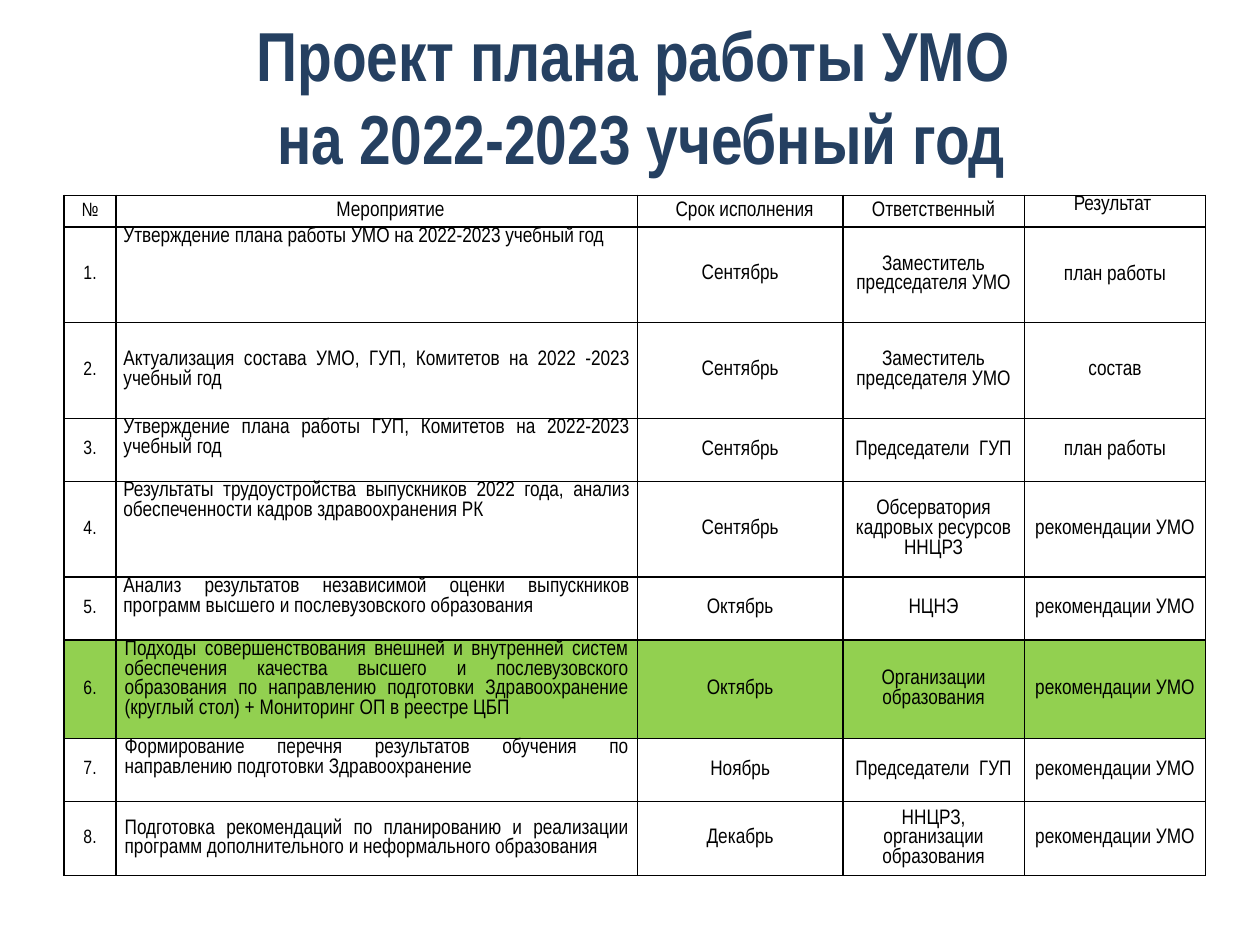
from dataclasses import dataclass

from lxml.etree import SubElement
from pptx import Presentation
from pptx.dml.color import RGBColor
from pptx.enum.text import MSO_ANCHOR, MSO_AUTO_SIZE, PP_ALIGN
from pptx.oxml.ns import qn
from pptx.util import Inches, Pt


@dataclass(frozen=True)
class Theme:
    font: str = "Arial Narrow"
    heading: str = "254061"
    ink: str = "000000"
    plain: str = "FFFFFF"
    highlight: str = "92D050"
    heading_size: float = 39.6
    body_size: float = 12
    number_size: float = 11


theme = Theme()


def style(paragraph, size, color, align):
    paragraph.alignment = align
    paragraph.font.name = theme.font
    paragraph.font.size = Pt(size)
    paragraph.font.color.rgb = RGBColor.from_string(color)


def outline(cell):
    properties = cell._tc.get_or_add_tcPr()
    for position, side in enumerate(("lnL", "lnR", "lnT", "lnB")):
        border = properties.makeelement(qn(f"a:{side}"), {"w": str(Pt(1))})
        solid = SubElement(border, qn("a:solidFill"))
        SubElement(solid, qn("a:srgbClr"), val=theme.ink)
        properties.insert(position, border)


headers = ["№", "Мероприятие", "Срок исполнения", "Ответственный", "Результат "]
activities = [
    ("Утверждение плана работы УМО на 2022-2023 учебный год",
     "Сентябрь", "Заместитель председателя УМО", "план работы"),
    ("Актуализация состава УМО, ГУП, Комитетов на 2022 -2023 учебный год",
     "Сентябрь", "Заместитель председателя УМО", "состав"),
    ("Утверждение плана работы ГУП, Комитетов на 2022-2023 учебный год",
     "Сентябрь", "Председатели  ГУП", "план работы"),
    ("Результаты трудоустройства выпускников 2022 года, анализ обеспеченности "
     "кадров здравоохранения РК",
     "Сентябрь", "Обсерватория кадровых ресурсов ННЦРЗ", "рекомендации УМО"),
    ("Анализ результатов независимой оценки выпускников программ высшего и "
     "послевузовского образования",
     "Октябрь", "НЦНЭ", "рекомендации УМО"),
    ("Подходы совершенствования внешней и внутренней систем обеспечения качества "
     "высшего и послевузовского образования по направлению подготовки "
     "Здравоохранение (круглый стол) + Мониторинг ОП в реестре ЦБП",
     "Октябрь", "Организации образования", "рекомендации УМО"),
    ("Формирование перечня результатов обучения по направлению подготовки "
     "Здравоохранение",
     "Ноябрь", "Председатели  ГУП", "рекомендации УМО"),
    ("Подготовка рекомендаций по планированию и реализации программ "
     "дополнительного и неформального образования",
     "Декабрь", "ННЦРЗ, организации образования", "рекомендации УМО"),
]
plan_rows = [headers] + [(f"{n}.", *activity) for n, activity in enumerate(activities, 1)]
column_widths = [0.41, 4.14, 1.63, 1.44, 1.44]
row_heights = [0.25, 0.76, 0.76, 0.5, 0.76, 0.5, 0.78, 0.5, 0.59]
number_column, activity_column, term_column, result_column = 0, 1, 2, 4
centred_activities = (0, 2, 8)
highlighted_row = 6
first_line_indents = {activity_column: 0.22, term_column: 0.07}

presentation = Presentation()
presentation.slide_width, presentation.slide_height = Inches(10), Inches(7.5)
slide = presentation.slides.add_slide(presentation.slide_layouts[5])

heading = slide.shapes.title
heading.left, heading.top = Inches(0.59), Inches(0.13)
heading.width, heading.height = Inches(9), Inches(1.25)
heading.text_frame.text = "Проект плана работы УМО \vна 2022-2023 учебный год"
heading.text_frame.auto_size = MSO_AUTO_SIZE.NONE
heading.text_frame.vertical_anchor = MSO_ANCHOR.MIDDLE
heading_line = heading.text_frame.paragraphs[0]
style(heading_line, theme.heading_size, theme.heading, PP_ALIGN.CENTER)
heading_line.font.bold = True

plan = slide.shapes.add_table(
    len(plan_rows), len(column_widths), Inches(0.51), Inches(1.55),
    Inches(sum(column_widths)), Inches(sum(row_heights)),
).table
for column, width in zip(plan.columns, column_widths):
    column.width = Inches(width)

for r, (values, height) in enumerate(zip(plan_rows, row_heights)):
    plan.rows[r].height = Inches(height)
    for c, value in enumerate(values):
        cell = plan.cell(r, c)
        cell.text = value
        cell.margin_left = cell.margin_right = Inches(0.07 if r >= 6 and c else 0.06)
        cell.margin_top = cell.margin_bottom = 0
        at_top = (c == activity_column and r not in centred_activities
                  or c == result_column and r == 0)
        cell.vertical_anchor = MSO_ANCHOR.TOP if at_top else MSO_ANCHOR.MIDDLE
        cell.fill.solid()
        cell.fill.fore_color.rgb = RGBColor.from_string(
            theme.highlight if r == highlighted_row else theme.plain)
        outline(cell)

        entry = cell.text_frame.paragraphs[0]
        style(entry,
              theme.number_size if c == number_column else theme.body_size,
              theme.ink,
              PP_ALIGN.JUSTIFY if r and c == activity_column else PP_ALIGN.CENTER)
        entry.font.bold = False
        if r and c == term_column:
            entry.line_spacing = Pt(11.1)
        if r == 0 and c in first_line_indents:
            entry._p.get_or_add_pPr().set("indent", str(Inches(first_line_indents[c])))

presentation.save("out.pptx")
